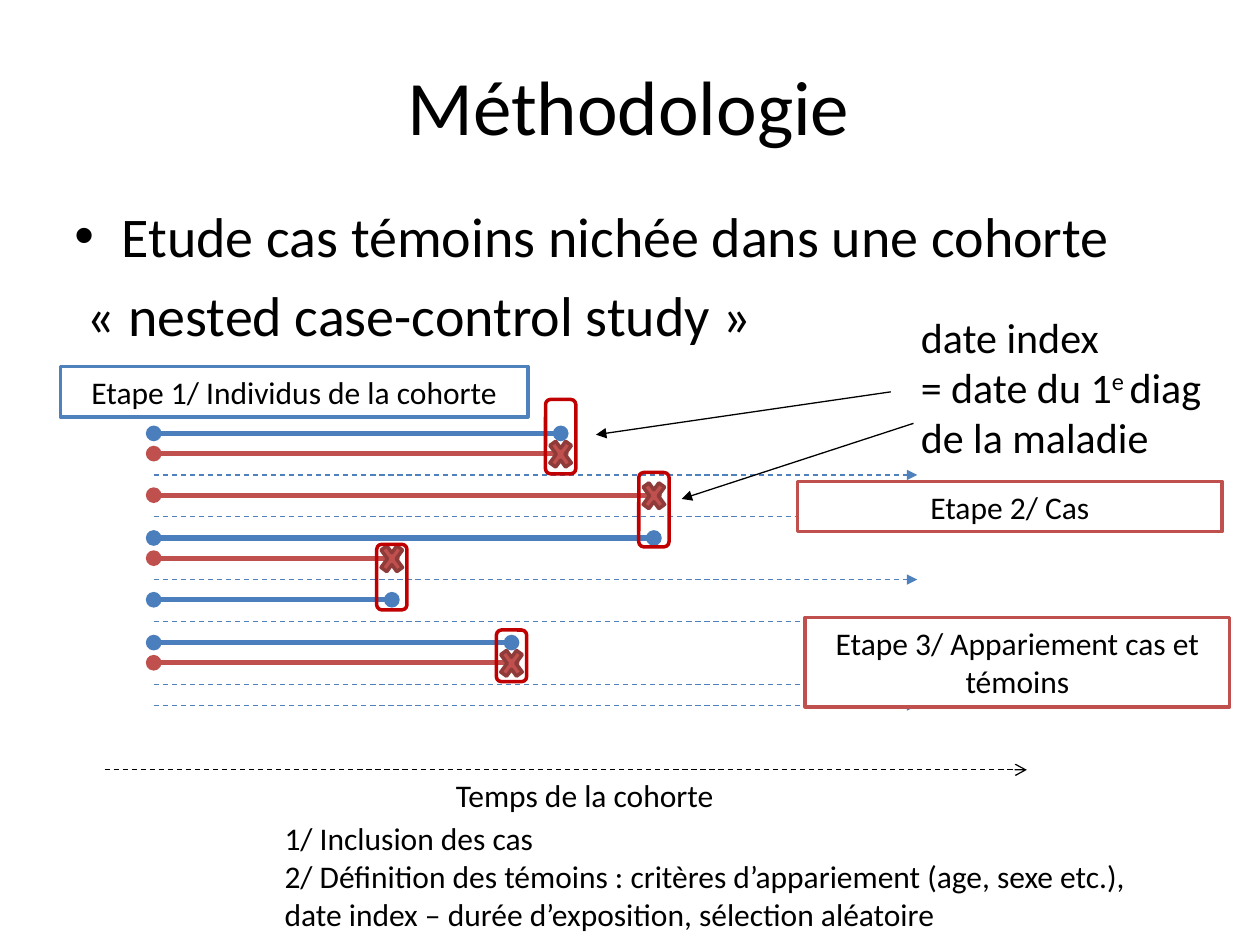
import lxml.etree
import pptx
import pptx.dml.color
import pptx.enum.dml
import pptx.enum.shapes
import pptx.enum.text
import pptx.oxml.ns
import pptx.util

PX = 9144
FONT = "Calibri"
COLORS = {
    "text": "000000",
    "paper": "FFFFFF",
    "control": "4B7EBC",
    "case": "C0504D",
    "censored": "4F81BD",
    "cross_edge": "8E3B39",
    "match": "C00000",
}
TRACKS = [
    ("control", 323), ("case", 323), ("censored", 606), ("case", 397),
    ("censored", 606), ("control", 397), ("case", 189), ("censored", 606),
    ("control", 189), ("censored", 606), ("control", 284), ("case", 284),
    ("censored", 606), ("censored", 606),
]
MATCHES = [(284, 183, 41), (189, 115, 52), (397, 58, 59), (323, 0, 59)]
MARK_WIDTH, CROSS_HEIGHT = 24, 33
FIRST_TRACK, TRACK_SPAN = 27, 216


def px(*lengths):
    return [pptx.util.Emu(length * PX) for length in lengths]


def rgb(name):
    return pptx.dml.color.RGBColor.from_string(COLORS[name])


def format_paragraph(paragraph, size):
    for run in paragraph.runs:
        run.font.name = FONT
        run.font.size = pptx.util.Pt(size)
        run.font.color.rgb = rgb("text")


def add_child(parent, tag, **attributes):
    return lxml.etree.SubElement(parent, pptx.oxml.ns.qn(tag), attributes)


def add_line(slide, start, end, color, width, dashed=False, head=None, tail=None):
    connector = slide.shapes.add_connector(
        pptx.enum.shapes.MSO_CONNECTOR.STRAIGHT, *px(*start, *end))
    line = connector.line
    line.color.rgb = rgb(color)
    line.width = pptx.util.Pt(width)
    if dashed:
        line.dash_style = pptx.enum.dml.MSO_LINE.DASH
    outline = line._get_or_add_ln()
    for tag, kind in (("a:headEnd", head), ("a:tailEnd", tail)):
        if kind:
            add_child(outline, tag, type=kind)
    add_child(connector._element.spPr, "a:effectLst")


def add_outlined_shape(slide, kind, box, line_color, fill_color=None):
    shape = slide.shapes.add_shape(kind, *px(*box))
    shape.shadow.inherit = False
    if fill_color:
        shape.fill.solid()
        shape.fill.fore_color.rgb = rgb(fill_color)
    else:
        shape.fill.background()
    shape.line.color.rgb = rgb(line_color)
    shape.line.width = pptx.util.Pt(2)
    return shape


def add_text(slide, box, lines, size):
    frame = slide.shapes.add_textbox(*px(*box)).text_frame
    frame.word_wrap = True
    frame.text = "\n".join(lines)
    for paragraph in frame.paragraphs:
        format_paragraph(paragraph, size)
    return frame


def add_step(slide, box, text, color):
    shape = add_outlined_shape(
        slide, pptx.enum.shapes.MSO_SHAPE.RECTANGLE, box, color, "paper")
    frame = shape.text_frame
    frame.word_wrap = True
    frame.text = text
    frame.paragraphs[0].alignment = pptx.enum.text.PP_ALIGN.CENTER
    format_paragraph(frame.paragraphs[0], 18)


def place_placeholder(placeholder, box, text, size):
    placeholder.left, placeholder.top, placeholder.width, placeholder.height = px(*box)
    frame = placeholder.text_frame
    frame.auto_size = pptx.enum.text.MSO_AUTO_SIZE.NONE
    frame.text = text
    for paragraph in frame.paragraphs:
        format_paragraph(paragraph, size)
    return frame


def fill_headings(slide, box):
    left, top, width, height = box
    place_placeholder(slide.shapes.title, (left, top, width, 125), "Méthodologie", 44)
    body = place_placeholder(
        slide.placeholders[1], (left, top + 134, width, height - 134),
        "Etude cas témoins nichée dans une cohorte\n"
        "«\u00a0nested case-control study\u00a0»", 32)
    body.paragraphs[0].space_before = pptx.util.Pt(0)
    properties = body.paragraphs[1]._p.get_or_add_pPr()
    properties.set("marL", str(10 * PX))
    properties.set("indent", "0")
    add_child(properties, "a:buNone")


def draw_cohort(slide, box):
    left, top, width, height = box
    cross_centers = []
    for index, (kind, length) in enumerate(TRACKS):
        y = top + FIRST_TRACK + TRACK_SPAN * index // (len(TRACKS) - 1)
        start, end = (left, y), (left + length, y)
        if kind == "censored":
            add_line(slide, start, end, kind, 0.75, dashed=True, tail="triangle")
        else:
            add_line(slide, start, end, kind, 3, head="oval", tail="oval")
        if kind == "case":
            cross_centers.append(end)
    for x, y in cross_centers:
        add_outlined_shape(
            slide, pptx.enum.shapes.MSO_SHAPE.MATH_MULTIPLY,
            (x - MARK_WIDTH // 2, y - CROSS_HEIGHT // 2, MARK_WIDTH, CROSS_HEIGHT),
            "cross_edge", "case")
    for x, y, match_height in MATCHES:
        add_outlined_shape(
            slide, pptx.enum.shapes.MSO_SHAPE.ROUNDED_RECTANGLE,
            (left + x - MARK_WIDTH // 2, top + y, MARK_WIDTH, match_height), "match")


def draw_time_axis(slide, box):
    left, top, width, height = box
    add_line(slide, (left, top), (left + width, top), "text", 0.75,
             dashed=True, tail="arrow")
    add_text(slide, (left + 269, top, 323, height), ["Temps de la cohorte"], 18)


def draw_index_date(slide, box):
    left, top, width, height = box
    frame = add_text(slide, box, ["date index", "= date du 1"], 24)
    paragraph = frame.paragraphs[1]
    superscript = paragraph.add_run()
    superscript.text = "e "
    paragraph.add_run().text = "diag de la maladie"
    format_paragraph(paragraph, 24)
    superscript.font._element.set("baseline", "30000")
    for start, end in (((4, 94), (-180, 154)), ((-14, 69), (-248, 103))):
        add_line(slide, (left + start[0], top + start[1]),
                 (left + end[0], top + end[1]), "text", 0.75, tail="triangle")


def main():
    presentation = pptx.Presentation()
    presentation.slide_width, presentation.slide_height = px(1000, 750)
    slide = presentation.slides.add_slide(presentation.slide_layouts[1])
    fill_headings(slide, (49, 21, 900, 629))
    draw_cohort(slide, (122, 317, 606, 243))
    add_text(slide, (216, 645, 712, 101), [
        "1/ Inclusion des cas",
        "2/ Définition des témoins : critères d’appariement (age, sexe etc.), "
        "date index – durée d’exposition, sélection aléatoire"], 18)
    draw_time_axis(slide, (83, 611, 732, 40))
    draw_index_date(slide, (721, 242, 283, 131))
    add_step(slide, (48, 291, 371, 40), "Etape 1/ Individus de la cohorte", "censored")
    add_step(slide, (633, 382, 337, 40), "Etape 2/ Cas", "case")
    add_step(slide, (639, 490, 337, 71), "Etape 3/ Appariement cas et témoins", "case")
    presentation.save("out.pptx")


if __name__ == "__main__":
    main()
